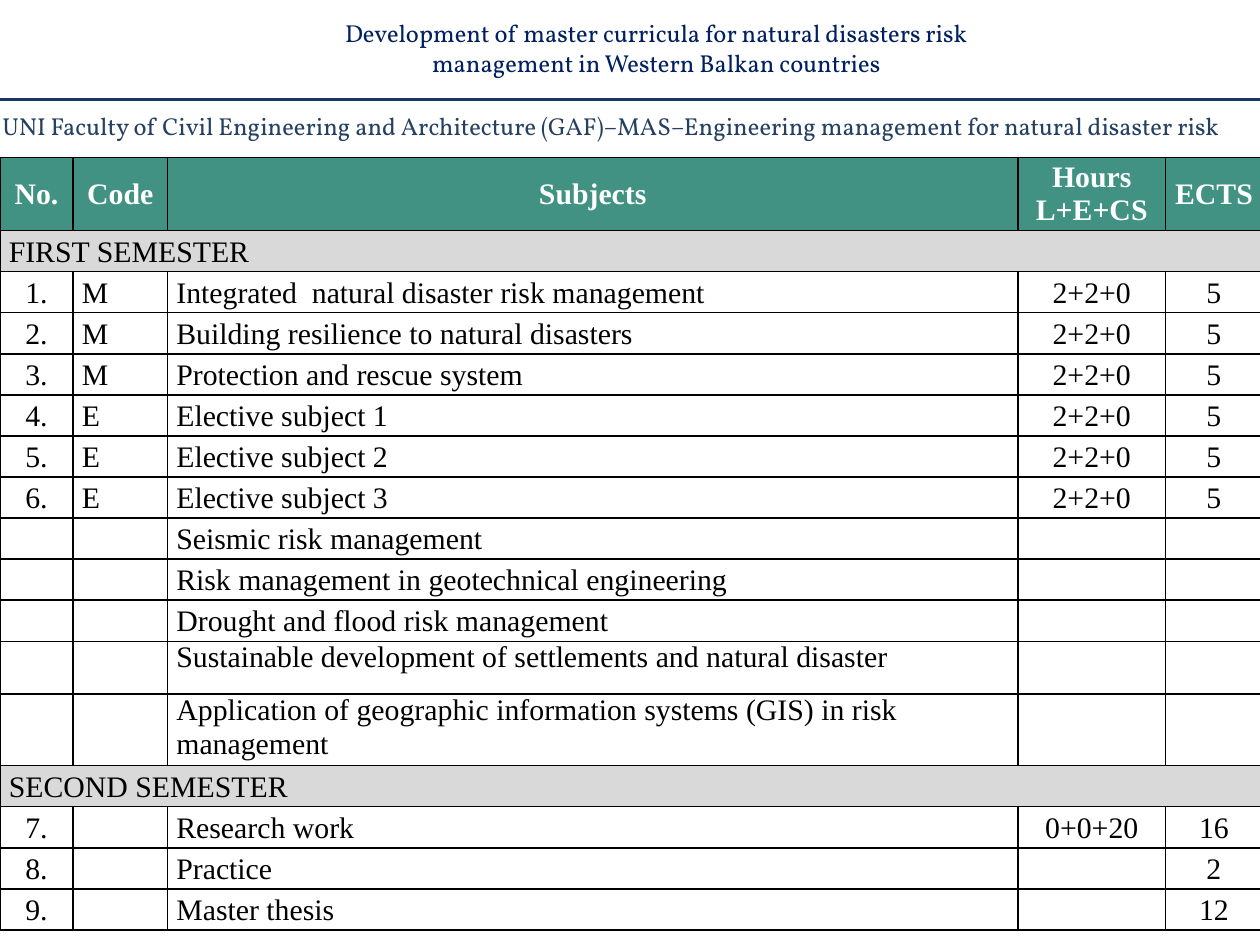
from dataclasses import dataclass

from lxml import etree
from pptx import Presentation
from pptx import util as u
from pptx.dml.color import RGBColor
from pptx.enum import shapes, text
from pptx.oxml import ns


@dataclass
class Theme:
    heading_font: str = "Vollkorn"
    table_font: str = "Times New Roman"
    heading_size: int = 14
    table_size: int = 17
    title: str = "002060"
    rule: str = "17375E"
    subtitle: str = "254061"
    header_fill: str = "419283"
    header_text: str = "FFFFFF"
    section_fill: str = "D9D9D9"
    body_text: str = "000000"
    border: str = "000000"


theme = Theme()
Inches = u.Inches


def add_run(paragraph, words, font, size, color, bold=False):
    run = paragraph.add_run()
    run.text = words
    run.font.name = font
    run.font.size = u.Pt(size)
    run.font.bold = bold
    run.font.color.rgb = RGBColor.from_string(color)


def add_borders(cell):
    properties = cell._tc.get_or_add_tcPr()
    for side in ("a:lnL", "a:lnR", "a:lnT", "a:lnB"):
        line = etree.SubElement(properties, ns.qn(side), w=str(u.Pt(1)))
        fill = etree.SubElement(line, ns.qn("a:solidFill"))
        etree.SubElement(fill, ns.qn("a:srgbClr"), val=theme.border)


presentation = Presentation()
presentation.slide_width = Inches(10)
presentation.slide_height = Inches(7.5)
slide = presentation.slides.add_slide(presentation.slide_layouts[5])

title = slide.shapes.title
title.left, title.top = Inches(2.17), Inches(0.17)
title.width, title.height = Inches(6.08), Inches(0.42)
title.text_frame.auto_size = text.MSO_AUTO_SIZE.NONE
title.text_frame.vertical_anchor = text.MSO_ANCHOR.MIDDLE
paragraph = title.text_frame.paragraphs[0]
paragraph.alignment = text.PP_ALIGN.CENTER
add_run(paragraph, "Development of master curricula for natural disasters risk management in Western Balkan countries",
        theme.heading_font, theme.heading_size, theme.title)

rule = slide.shapes.add_connector(
    shapes.MSO_CONNECTOR.STRAIGHT, 0, Inches(0.79), Inches(10), Inches(0.79))
rule.line.color.rgb = RGBColor.from_string(theme.rule)
rule.line.width = u.Pt(2)
etree.SubElement(rule._element.spPr, ns.qn("a:effectLst"))

subtitle = slide.shapes.add_textbox(Inches(-0.08), Inches(0.83), Inches(10.08), Inches(0.36))
subtitle.text_frame.word_wrap = True
add_run(subtitle.text_frame.paragraphs[0],
        "UNI Faculty of Civil Engineering and Architecture (GAF)–MAS–Engineering management for natural disaster risk",
        theme.heading_font, theme.heading_size, theme.subtitle)

HEADER = ("No.", "Code", "Subjects", "Hours\nL+E+CS", "ECTS")
ROWS = [
    (0.58, HEADER),
    (0.3, ("FIRST SEMESTER",)),
    (0.3, ("1.", "M", "Integrated  natural disaster risk management", "2+2+0", "5")),
    (0.3, ("2.", "M", "Building resilience to natural disasters", "2+2+0", "5")),
    (0.3, ("3.", "M", "Protection and rescue system", "2+2+0", "5")),
    (0.3, ("4.", "E", "Elective subject 1", "2+2+0", "5")),
    (0.3, ("5.", "E", "Elective subject 2", "2+2+0", "5")),
    (0.3, ("6.", "E", "Elective subject 3", "2+2+0", "5")),
    (0.32, ("", "", "Seismic risk management", "", "")),
    (0.32, ("", "", "Risk management in geotechnical engineering", "", "")),
    (0.32, ("", "", "Drought and flood risk management", "", "")),
    (0.42, ("", "", "Sustainable development of settlements and natural disaster", "", "")),
    (0.32, ("", "", "Application of geographic information systems (GIS) in risk management", "", "")),
    (0.3, ("SECOND SEMESTER",)),
    (0.32, ("7.", "", "Research work", "0+0+20", "16")),
    (0.32, ("8.", "", "Practice", "", "2")),
    (0.32, ("9.", "", "Master thesis", "", "12")),
]
COLUMN_WIDTHS = (0.58, 0.75, 6.75, 1.17, 0.77)
CENTERED_COLUMNS = (0, 3, 4)
SINGLE_SPACED_ROWS = (0, 11, 12)

table = slide.shapes.add_table(
    len(ROWS), len(HEADER), 0, Inches(1.25), Inches(sum(COLUMN_WIDTHS)),
    Inches(sum(height for height, labels in ROWS))).table
table.first_row = False
table.horz_banding = False
for column, width in zip(table.columns, COLUMN_WIDTHS):
    column.width = Inches(width)

for row_index, (height, labels) in enumerate(ROWS):
    table.rows[row_index].height = Inches(height)
    is_header = row_index == 0
    is_section = len(labels) == 1
    fill_color = theme.header_fill if is_header else theme.section_fill if is_section else None
    if is_section:
        table.cell(row_index, 0).merge(table.cell(row_index, len(HEADER) - 1))
    for column_index in range(len(HEADER)):
        cell = table.cell(row_index, column_index)
        add_borders(cell)
        if fill_color:
            cell.fill.solid()
            cell.fill.fore_color.rgb = RGBColor.from_string(fill_color)
        else:
            cell.fill.background()
        cell.margin_left = cell.margin_right = Inches(0.07)
        cell.margin_top = cell.margin_bottom = 0
        if is_header:
            cell.vertical_anchor = text.MSO_ANCHOR.MIDDLE
        label = labels[column_index] if column_index < len(labels) else ""
        if not label:
            continue
        for line_index, words in enumerate(label.split("\n")):
            frame = cell.text_frame
            paragraph = frame.add_paragraph() if line_index else frame.paragraphs[0]
            if is_header or (column_index in CENTERED_COLUMNS and not is_section):
                paragraph.alignment = text.PP_ALIGN.CENTER
            if row_index not in SINGLE_SPACED_ROWS:
                paragraph.line_spacing = 1.15
            if is_section or words == "2+2+0":
                paragraph.space_after = u.Pt(3)
            add_run(paragraph, words, theme.table_font, theme.table_size,
                    theme.header_text if is_header else theme.body_text, is_header)

presentation.save("out.pptx")
